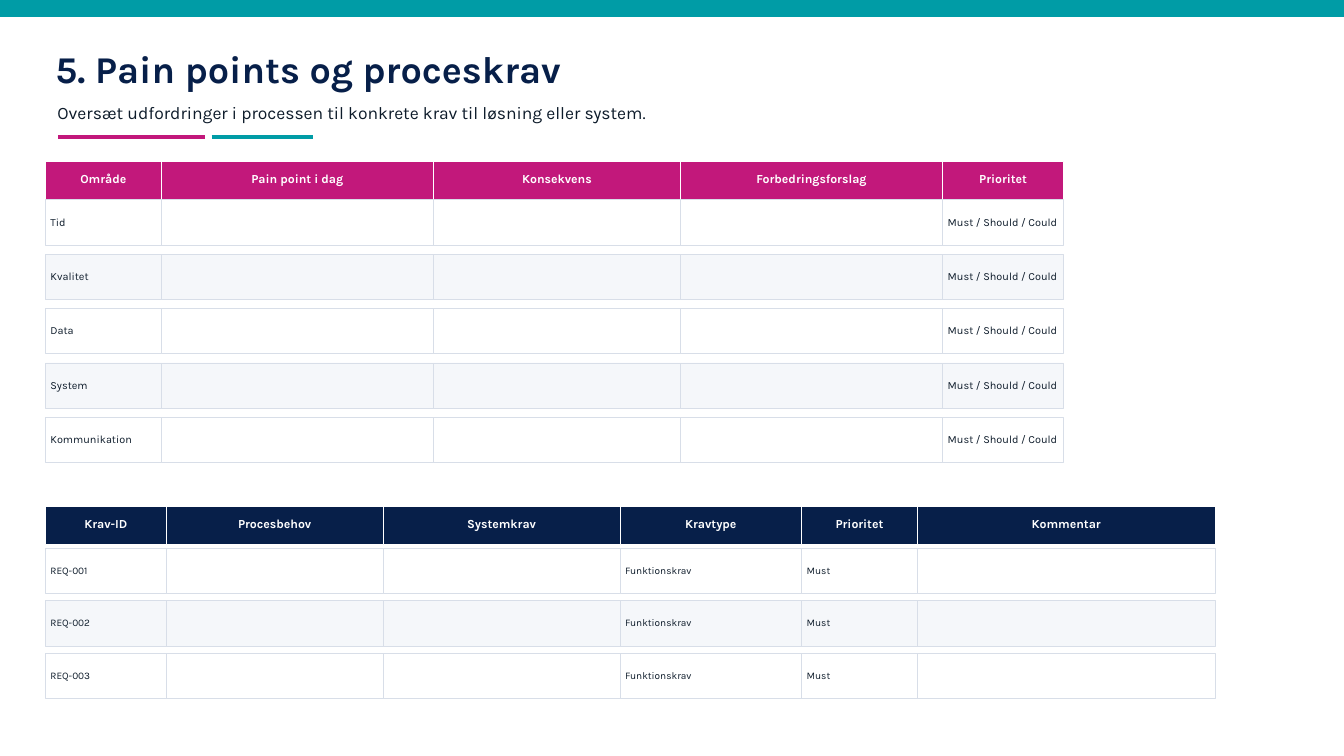
import pptx
import pptx.dml.color
import pptx.enum.shapes
import pptx.enum.text
import pptx.oxml
import pptx.util

PX = 9144  # 100 px to the inch
FONT = "Karla"
TEAL, PINK, NAVY, INK = "009CA6", "C2187B", "071F49", "0D1B2A"
WHITE, PALE, BORDER = "FFFFFF", "F5F7FA", "D8DEE8"
LEFT, HEADER_HEIGHT, ROW_HEIGHT = 45, 38, 45
ALIGN = pptx.enum.text.PP_ALIGN


def color(hex_text):
    return pptx.dml.color.RGBColor.from_string(hex_text)


def add_box(at, fill=None, line=None, text="", size=9, ink=INK, bold=False,
            align=ALIGN.LEFT, side=0, bottom=0):
    """Add a filled rectangle, or a plain text box when fill is None."""
    place = [length * PX for length in at]
    if fill is None:
        box = page.shapes.add_textbox(*place)
    else:
        box = page.shapes.add_shape(pptx.enum.shapes.MSO_SHAPE.RECTANGLE, *place)
        box.shadow.inherit = False
        box.fill.solid()
        box.fill.fore_color.rgb = color(fill)
        box.line.color.rgb = color(line)
        box.line.width = pptx.util.Pt(0.4 if text or line == BORDER else 1)
    if not text:
        return
    frame_format = {
        "word_wrap": True,
        "vertical_anchor": pptx.enum.text.MSO_ANCHOR.MIDDLE,
        "margin_left": side * PX,
        "margin_right": side * PX,
        "margin_top": 0,
        "margin_bottom": bottom * PX,
    }
    for name, value in frame_format.items():
        setattr(box.text_frame, name, value)
    para = box.text_frame.paragraphs[0]
    para.alignment = align
    span = para.add_run()
    span.text = text
    span.font.color.rgb = color(ink)
    font_format = {"name": FONT, "size": pptx.util.Pt(size), "bold": bold}
    for name, value in font_format.items():
        setattr(span.font, name, value)


deck = pptx.Presentation()
deck.slide_width = 1333 * PX
deck.slide_height = 750 * PX
page = deck.slides.add_slide(deck.slide_layouts[6])

# Heading
add_box((0, 0, 1333, 16), TEAL, TEAL)
add_box((55, 45, 880, 45), text="5. Pain points og proceskrav",
        size=27, ink=NAVY, bold=True)
add_box((57, 95, 980, 33), size=12.5,
        text="Oversæt udfordringer i processen til konkrete krav til løsning eller system.")
for start, end, rule_color in ((58, 203, PINK), (210, 310, TEAL)):
    rule = page.shapes.add_connector(
        pptx.enum.shapes.MSO_CONNECTOR.STRAIGHT,
        start * PX, 136 * PX, end * PX, 136 * PX)
    rule.line.color.rgb = color(rule_color)
    rule.line.width = pptx.util.Pt(3)
    rule._element.spPr.append(pptx.oxml.parse_xml(
        '<a:effectLst xmlns:a="http://schemas.openxmlformats.org/drawingml/2006/main"/>'))

# Grids of separate rows: pain points above, requirements below
grids = [
    {
        "top": 160, "first_row": 198, "pitch": 54, "fill": PINK, "size": 7.8,
        "columns": {"Område": 115, "Pain point i dag": 270, "Konsekvens": 245,
                    "Forbedringsforslag": 260, "Prioritet": 120},
        "rows": [{"Område": area, "Prioritet": "Must / Should / Could"}
                 for area in ("Tid", "Kvalitet", "Data", "System", "Kommunikation")],
    },
    {
        "top": 502, "first_row": 544, "pitch": 52, "fill": NAVY, "size": 7.2,
        "columns": {"Krav-ID": 120, "Procesbehov": 215, "Systemkrav": 235,
                    "Kravtype": 180, "Prioritet": 115, "Kommentar": 295},
        "rows": [{"Krav-ID": f"REQ-{number:03}", "Kravtype": "Funktionskrav",
                  "Prioritet": "Must"} for number in (1, 2, 3)],
    },
]
for grid in grids:
    left = LEFT
    for heading, width in grid["columns"].items():
        add_box((left, grid["top"], width, HEADER_HEIGHT), grid["fill"], WHITE,
                heading, 8.8, WHITE, True, ALIGN.CENTER, side=4, bottom=3)
        left += width
    for index, row in enumerate(grid["rows"]):
        top = grid["first_row"] + index * grid["pitch"]
        left = LEFT
        for heading, width in grid["columns"].items():
            add_box((left, top, width, ROW_HEIGHT), PALE if index % 2 else WHITE,
                    BORDER, row.get(heading, ""), grid["size"], side=5, bottom=1)
            left += width

deck.save("out.pptx")
